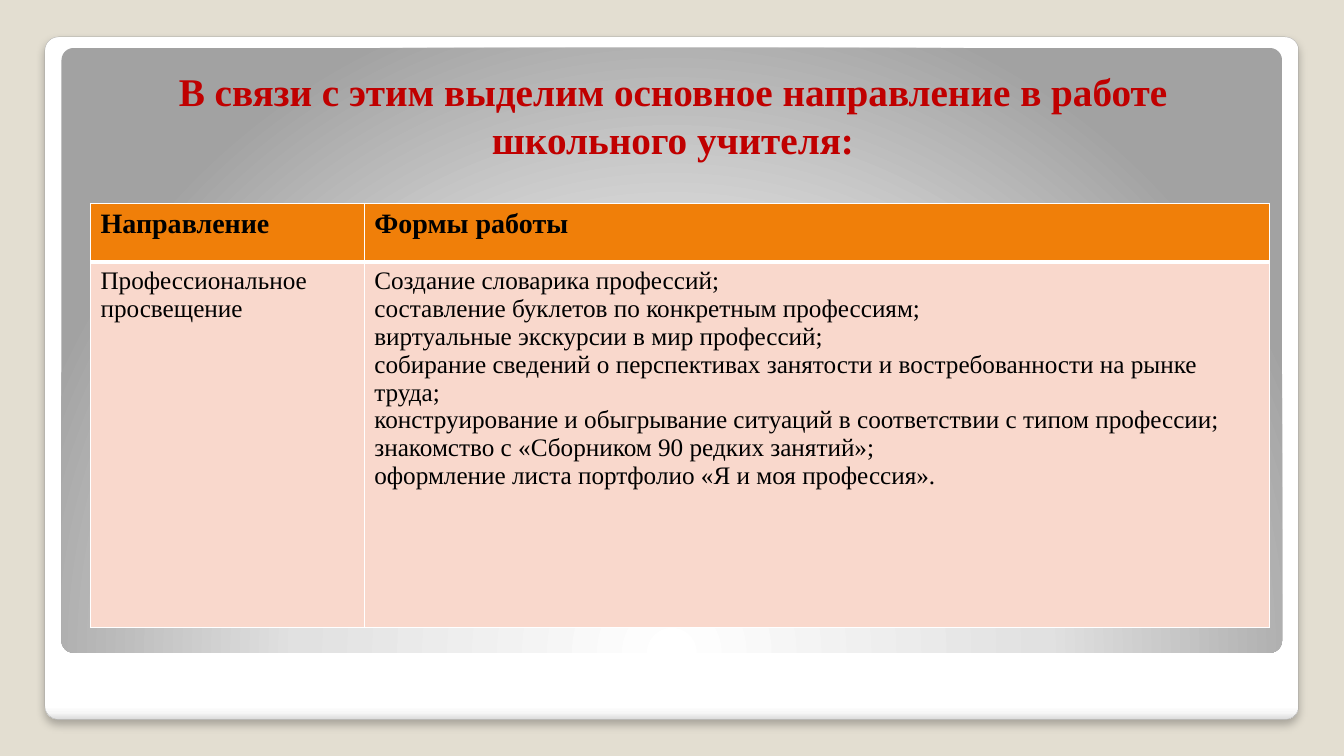
from dataclasses import dataclass

from lxml.etree import SubElement
from pptx import Presentation
from pptx.dml.color import RGBColor
from pptx.enum.shapes import MSO_SHAPE
from pptx.enum.text import MSO_ANCHOR, PP_ALIGN
from pptx.oxml import parse_xml
from pptx.oxml.ns import nsdecls, qn
from pptx.shapes.autoshape import Shape
from pptx.slide import Slide
from pptx.table import _Cell
from pptx.text.text import TextFrame
from pptx.util import Cm, Pt


@dataclass(frozen=True)
class Theme:
    font: str = "Times New Roman"
    background: str = "E3DED1"
    title: str = "C00000"
    text: str = "000000"
    header_fill: str = "F07F09"
    body_fill: str = "F9D8CC"
    border: str = "FFFFFF"
    panel_line: str = "A4A4A4"
    shadow: str = "000000"
    title_size: float = 28
    header_size: float = 20
    body_size: float = 18


@dataclass(frozen=True)
class Panel:
    left: float
    top: float
    width: float
    height: float
    stops: tuple[tuple[int, str], ...]
    direction: str


@dataclass(frozen=True)
class RowStyle:
    height: float
    fill: str
    size: float
    bold: bool
    borders: dict[str, float]


THEME = Theme()
PANELS = (
    Panel(1.13, 0.93, 31.6, 17.2,
          ((0, "FFFFFF"), (98, "FFFFFF"), (99, "F7F7F7"), (100, "DADADA")),
          '<a:lin ang="5400000" scaled="0"/>'),
    Panel(1.55, 1.21, 30.76, 15.24,
          ((0, "FFFFFF"), (55, "E1E1E1"), (100, "A2A2A2")),
          '<a:path path="circle"><a:fillToRect l="50000" t="175000" '
          'r="50000" b="-75000"/></a:path>'),
)
TITLE = "В связи с этим выделим основное направление в работе школьного учителя:"
COLUMN_WIDTHS = (6.9, 22.81)
ROW_STYLES = (
    RowStyle(1.47, THEME.header_fill, THEME.header_size, True,
             {"lnL": 1, "lnR": 1, "lnT": 1, "lnB": 3}),
    RowStyle(9.22, THEME.body_fill, THEME.body_size, False,
             {"lnL": 1, "lnR": 1, "lnT": 3, "lnB": 1}),
)
ROWS = (
    (("Направление",), ("Формы работы",)),
    (
        ("Профессиональное", "просвещение"),
        (
            "Создание словарика профессий;",
            "составление буклетов по конкретным профессиям;",
            "виртуальные экскурсии в мир профессий;",
            "собирание сведений о перспективах занятости и востребованности на рынке труда;",
            "конструирование и обыгрывание ситуаций в соответствии с типом профессии;",
            "знакомство с «Сборником 90 редких занятий»;",
            "оформление листа портфолио «Я и моя профессия».",
        ),
    ),
)


def write_lines(frame: TextFrame, lines: tuple[str, ...], size: float,
                bold: bool, color: str) -> None:
    frame.word_wrap = True
    font_format = {"name": THEME.font, "size": Pt(size), "bold": bold}
    for index, line in enumerate(lines):
        paragraph = frame.add_paragraph() if index else frame.paragraphs[0]
        run = paragraph.add_run()
        run.text = line
        for name, value in font_format.items():
            setattr(run.font, name, value)
        run.font.color.rgb = RGBColor.from_string(color)


def add_panel(slide: Slide, panel: Panel) -> Shape:
    shape = slide.shapes.add_shape(
        MSO_SHAPE.ROUNDED_RECTANGLE, Cm(panel.left), Cm(panel.top),
        Cm(panel.width), Cm(panel.height))
    shape.adjustments[0] = 0.02
    stops = "".join(
        f'<a:gs pos="{position * 1000}"><a:srgbClr val="{color}"/></a:gs>'
        for position, color in panel.stops)
    shape._element.spPr.append(parse_xml(
        f'<a:gradFill {nsdecls("a")} rotWithShape="1"><a:gsLst>{stops}</a:gsLst>'
        f'{panel.direction}</a:gradFill>'))
    shape.line.fill.background()
    shape.shadow.inherit = False
    return shape


def add_frame_edge(shape: Shape) -> None:
    """Give the outer panel its hairline and soft drop shadow."""
    shape.line.color.rgb = RGBColor.from_string(THEME.panel_line)
    shape.line.width = Pt(0.16)
    effects = shape._element.spPr.find(qn("a:effectLst"))
    effects.append(parse_xml(
        f'<a:outerShdw {nsdecls("a")} blurRad="{Pt(6)}" dist="{Pt(4)}" '
        f'dir="5400000" algn="t" rotWithShape="0"><a:srgbClr val="{THEME.shadow}">'
        '<a:alpha val="25000"/></a:srgbClr></a:outerShdw>'))


def add_title(slide: Slide) -> None:
    box = slide.shapes.add_textbox(Cm(1.81), Cm(0.94), Cm(30.3), Cm(3.28))
    frame = box.text_frame
    write_lines(frame, (TITLE,), THEME.title_size, True, THEME.title)
    frame.vertical_anchor = MSO_ANCHOR.BOTTOM
    paragraph_format = {"alignment": PP_ALIGN.CENTER, "line_spacing": Pt(34.3)}
    for name, value in paragraph_format.items():
        setattr(frame.paragraphs[0], name, value)


def style_cell(cell: _Cell, style: RowStyle) -> None:
    properties = cell._tc.get_or_add_tcPr()
    for side, width in style.borders.items():
        line = SubElement(properties, qn(f"a:{side}"), w=str(Pt(width)))
        fill = SubElement(line, qn("a:solidFill"))
        SubElement(fill, qn("a:srgbClr"), val=THEME.border)
    cell.fill.solid()
    cell.fill.fore_color.rgb = RGBColor.from_string(style.fill)


def add_directions_table(slide: Slide) -> None:
    table = slide.shapes.add_table(
        len(ROWS), len(COLUMN_WIDTHS), Cm(2.28), Cm(5.13),
        Cm(sum(COLUMN_WIDTHS)), Cm(sum(style.height for style in ROW_STYLES))).table
    for column, width in zip(table.columns, COLUMN_WIDTHS):
        column.width = Cm(width)
    for row, style, texts in zip(table.rows, ROW_STYLES, ROWS):
        row.height = Cm(style.height)
        for cell, lines in zip(row.cells, texts):
            style_cell(cell, style)
            write_lines(cell.text_frame, lines, style.size, style.bold, THEME.text)


def main() -> None:
    presentation = Presentation()
    presentation.slide_width = Cm(33.87)
    presentation.slide_height = Cm(19.05)
    slide = presentation.slides.add_slide(presentation.slide_layouts[6])
    slide.background.fill.solid()
    slide.background.fill.fore_color.rgb = RGBColor.from_string(THEME.background)
    outer_panel, _ = [add_panel(slide, panel) for panel in PANELS]
    add_frame_edge(outer_panel)
    add_title(slide)
    add_directions_table(slide)
    presentation.save("out.pptx")


if __name__ == "__main__":
    main()
